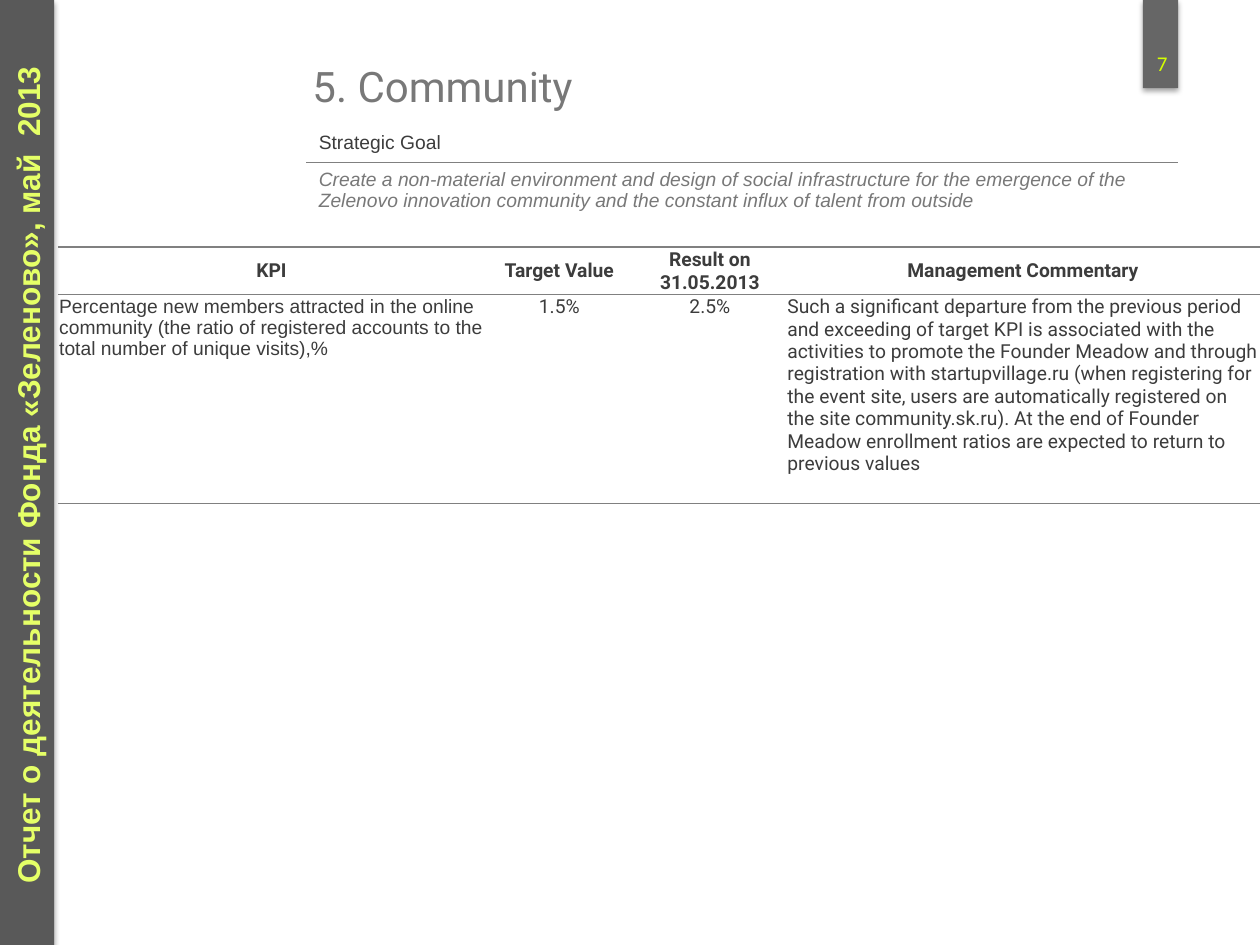
"""Build the Community KPI slide of the foundation's activity report."""
from lxml.etree import SubElement
from pptx import Presentation
from pptx.dml.color import RGBColor
from pptx.enum.shapes import MSO_SHAPE
from pptx.enum.text import MSO_ANCHOR, PP_ALIGN
from pptx.oxml import parse_xml
from pptx.oxml.ns import nsdecls, qn
from pptx.util import Inches, Pt

COLORS = {
    "tab": "666666", "sidebar": "595959", "rule": "808080", "ink": "3C3C3C",
    "muted": "787878", "lime": "D4FF01", "pale_lime": "E5FF67",
}
SHADOW = (
    f'<a:effectLst {nsdecls("a")}><a:outerShdw blurRad="{Pt(3.1)}" dist="{Pt(1.8)}" '
    'dir="5400000" rotWithShape="0"><a:srgbClr val="000000"><a:alpha val="35000"/>'
    '</a:srgbClr></a:outerShdw></a:effectLst>'
)


class SlideBuilder:
    """Hold the style and the current slide, and draw each kind of element."""

    def __init__(self, presentation):
        self.slide = presentation.slides.add_slide(presentation.slide_layouts[5])

    def color(self, name):
        return RGBColor.from_string(COLORS[name])

    def set_text(self, frame, text, size, font, color, bold=False, italic=False,
                 align=PP_ALIGN.LEFT):
        frame.text = text
        paragraph = frame.paragraphs[0]
        paragraph.alignment = align
        paragraph.font.size = Pt(size)
        paragraph.font.name = font
        paragraph.font.bold = bold
        paragraph.font.italic = italic
        paragraph.font.color.rgb = self.color(color)

    def title(self, box, text, **style):
        heading = self.slide.shapes.title
        heading.left, heading.top, heading.width, heading.height = map(Inches, box)
        heading.text_frame.vertical_anchor = MSO_ANCHOR.TOP
        self.set_text(heading.text_frame, text, **style)

    def bar(self, box, color):
        bar = self.slide.shapes.add_shape(MSO_SHAPE.RECTANGLE, *map(Inches, box))
        bar.fill.solid()
        bar.fill.fore_color.rgb = self.color(color)
        bar.line.fill.background()
        bar.shadow.inherit = False
        properties = bar._element.spPr
        properties.replace(properties.find(qn("a:effectLst")), parse_xml(SHADOW))

    def label(self, box, text, rotation=0, wrap=True, anchor=MSO_ANCHOR.TOP, **style):
        label = self.slide.shapes.add_textbox(*map(Inches, box))
        label.rotation = rotation
        label.text_frame.word_wrap = wrap
        label.text_frame.vertical_anchor = anchor
        self.set_text(label.text_frame, text, **style)

    def borders(self, cell, ruled):
        properties = cell._tc.get_or_add_tcPr()
        for side in "LRTB":
            line = SubElement(properties, qn(f"a:ln{side}"), w=str(Pt(1)))
            if side in ruled:
                fill = SubElement(line, qn("a:solidFill"))
                SubElement(fill, qn("a:srgbClr"), val=COLORS["rule"])
            else:
                SubElement(line, qn("a:noFill"))

    def table(self, left, top, widths, heights, rows, ruled, margins=None):
        table = self.slide.shapes.add_table(
            len(rows), len(widths), Inches(left), Inches(top),
            Inches(sum(widths)), Inches(sum(heights))).table
        table.first_row = table.horz_banding = False
        for column, width in zip(table.columns, widths):
            column.width = Inches(width)
        for row, height, contents, sides in zip(table.rows, heights, rows, ruled):
            row.height = Inches(height)
            for cell, (text, style) in zip(row.cells, contents):
                self.borders(cell, sides)
                cell.fill.background()
                if margins:
                    (cell.margin_left, cell.margin_top,
                     cell.margin_right, cell.margin_bottom) = map(Inches, margins)
                if style.get("bold"):
                    cell.vertical_anchor = MSO_ANCHOR.MIDDLE
                self.set_text(cell.text_frame, text, **style)


def main():
    presentation = Presentation()
    presentation.slide_width, presentation.slide_height = Inches(10), Inches(7.5)
    builder = SlideBuilder(presentation)

    builder.bar((9.07, 0, 0.28, 0.7), "tab")
    builder.label((9.01, 0.3, 0.43, 0.4), "7", anchor=MSO_ANCHOR.MIDDLE, size=12,
                  font="Calibri", color="lime", align=PP_ALIGN.CENTER)
    builder.bar((0, 0, 0.43, 7.5), "sidebar")
    builder.label((-3.15, 3.54, 6.74, 0.4),
                  "Отчет о деятельности Фонда «Зеленово», май  2013",
                  rotation=270, wrap=False, size=18, font="Arial",
                  color="pale_lime", bold=True)
    builder.title((2.38, 0.43, 6.39, 0.87), "5. Community",
                  size=24, font="Roboto", color="muted")

    plain = {"size": 11, "font": "Arial", "color": "ink"}
    comment = {**plain, "font": "Roboto"}
    centered = {**comment, "align": PP_ALIGN.CENTER}
    header = {**centered, "bold": True}
    headings = ("KPI", "Target Value", "Result on 31.05.2013", "Management Commentary")
    builder.table(
        0.46, 1.96, (3.39, 1.18, 1.21, 3.76), (0.37, 1.66),
        [
            [(heading, header) for heading in headings],
            [
                ("Percentage new members attracted in the online community (the ratio "
                 "of registered accounts to the total number of unique visits),%", plain),
                ("1.5%", centered),
                ("2.5%", centered),
                ("Such a significant departure from the previous period and exceeding "
                 "of target KPI is associated with the activities to promote the "
                 "Founder Meadow and through registration with startupvillage.ru (when "
                 "registering for the event site, users are automatically registered on "
                 "the site community.sk.ru). At the end of Founder Meadow enrollment "
                 "ratios are expected to return to previous values", comment),
            ],
        ],
        ruled=("TB", "TB"), margins=(0.01, 0.01, 0.01, 0))

    builder.table(
        2.43, 1, (6.92,), (0.29, 0.46),
        [
            [("Strategic Goal", plain)],
            [("Create a non-material environment and design of social infrastructure "
              "for the emergence of the Zelenovo innovation community and the constant "
              "influx of talent from outside",
              {**plain, "color": "muted", "italic": True})],
        ],
        ruled=("B", "T"))

    presentation.save("out.pptx")


if __name__ == "__main__":
    main()
